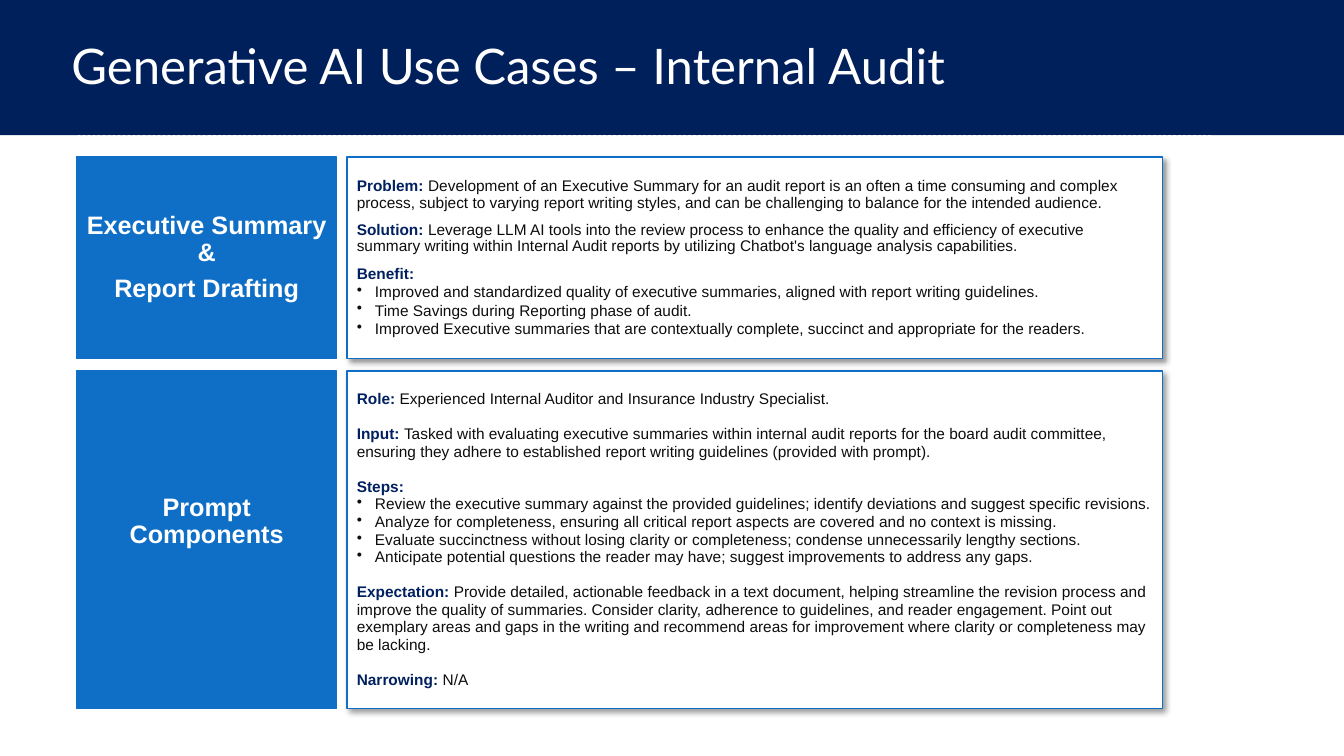
from lxml.etree import SubElement
from pptx import Presentation
from pptx.dml.color import RGBColor
from pptx.enum.dml import MSO_LINE
from pptx.enum.shapes import MSO_CONNECTOR, MSO_SHAPE
from pptx.enum.text import MSO_ANCHOR, PP_ALIGN
from pptx.oxml.ns import qn
from pptx.util import Inches, Pt

NAVY = RGBColor(0x00, 0x20, 0x5B)
HEADING = RGBColor(0x00, 0x20, 0x60)
BLUE = RGBColor(0x0F, 0x6F, 0xC6)
WHITE = RGBColor(0xFF, 0xFF, 0xFF)
INK = RGBColor(0x0D, 0x0D, 0x0D)

# Each row: top, height, label lines, label bottom inset, line spacing,
# bullet line spacing, gap between sections, sections (heading, text, bullets)
ROWS = [
    (1.56, 2, ["Executive Summary &", "Report Drafting"], 0.05, 0.9, 1.0, 7.5, [
        ("Problem:", "Development of an Executive Summary for an audit report is an often a time "
         "consuming and complex process, subject to varying report writing styles, and can be "
         "challenging to balance for the intended audience.", []),
        ("Solution:", "Leverage LLM AI tools into the review process to enhance the quality and "
         "efficiency of executive summary writing within Internal Audit reports by utilizing "
         "Chatbot's language analysis capabilities.", []),
        ("Benefit:", "", [
            "Improved and standardized quality of executive summaries, aligned with report "
            "writing guidelines.",
            "Time Savings during Reporting phase of audit.",
            "Improved Executive summaries that are contextually complete, succinct and "
            "appropriate for the readers."]),
    ]),
    (3.68, 3.35, ["Prompt Components"], 0.4, 0.95, 0.95, 12.5, [
        ("Role:", "Experienced Internal Auditor and Insurance Industry Specialist.", []),
        ("Input:", "Tasked with evaluating executive summaries within internal audit reports for "
         "the board audit committee, ensuring they adhere to established report writing "
         "guidelines (provided with prompt).", []),
        ("Steps:", "", [
            "Review the executive summary against the provided guidelines; identify deviations "
            "and suggest specific revisions.",
            "Analyze for completeness, ensuring all critical report aspects are covered and no "
            "context is missing.",
            "Evaluate succinctness without losing clarity or completeness; condense "
            "unnecessarily lengthy sections.",
            "Anticipate potential questions the reader may have; suggest improvements to "
            "address any gaps."]),
        ("Expectation:", "Provide detailed, actionable feedback in a text document, helping "
         "streamline the revision process and improve the quality of summaries. Consider clarity, "
         "adherence to guidelines, and reader engagement. Point out exemplary areas and gaps in "
         "the writing and recommend areas for improvement where clarity or completeness may be "
         "lacking.", []),
        ("Narrowing:", "N/A", []),
    ]),
]

presentation = Presentation()
presentation.slide_width = Inches(13.33)
presentation.slide_height = Inches(7.5)
slide = presentation.slides.add_slide(presentation.slide_layouts[6])


def add_box(left, top, width, height, fill, line=None):
    shape = slide.shapes.add_shape(MSO_SHAPE.RECTANGLE, Inches(left), Inches(top),
                                   Inches(width), Inches(height))
    shape.shadow.inherit = False
    shape.fill.solid()
    shape.fill.fore_color.rgb = fill
    if line is None:
        shape.line.fill.background()
    else:
        shape.line.color.rgb = line
        shape.line.width = Pt(1)
    shape.text_frame.word_wrap = True
    shape.text_frame.vertical_anchor = MSO_ANCHOR.MIDDLE
    return shape


def next_paragraph(frame, line_spacing, alignment=PP_ALIGN.LEFT):
    first = frame.paragraphs[0]
    paragraph = frame.add_paragraph() if first.runs else first
    paragraph.alignment = alignment
    paragraph.line_spacing = line_spacing
    return paragraph


# Title band with dashed rule
add_box(0, 0, 13.33, 1.34, NAVY)
rule = slide.shapes.add_connector(MSO_CONNECTOR.STRAIGHT, Inches(0.77), Inches(1.34),
                                  Inches(12.03), Inches(1.34))
rule.line.color.rgb = WHITE
rule.line.width = Pt(0.5)
rule.line.dash_style = MSO_LINE.DASH
SubElement(rule._element.spPr, qn("a:effectLst"))

title = slide.shapes.add_textbox(Inches(0.61), Inches(0.08), Inches(11.59), Inches(1.2))
title.text_frame.word_wrap = True
title.text_frame.vertical_anchor = MSO_ANCHOR.MIDDLE
paragraph = next_paragraph(title.text_frame, 0.9)
paragraph.text = "Generative AI Use Cases – Internal Audit"
paragraph.font.name = "Lato"
paragraph.font.size = Pt(35)
paragraph.font.color.rgb = WHITE

for top, height, label_lines, bottom_inset, spacing, bullet_spacing, gap, sections in ROWS:
    # Blue label
    label = add_box(0.76, top, 2.58, height, BLUE, BLUE)
    label.text_frame.margin_bottom = Inches(bottom_inset)
    for text in label_lines:
        paragraph = next_paragraph(label.text_frame, 0.9, PP_ALIGN.CENTER)
        paragraph.text = text
        paragraph.space_after = Pt(6)
        paragraph.font.name = "Arial"
        paragraph.font.size = Pt(18)
        paragraph.font.bold = True
        paragraph.font.color.rgb = WHITE

    # White panel with drop shadow
    panel = add_box(3.44, top, 8.09, height, WHITE, BLUE)
    effects = panel._element.spPr.find(qn("a:effectLst"))
    shadow = SubElement(effects, qn("a:outerShdw"), blurRad=str(Pt(4)), dist=str(Pt(3)),
                        dir="2700000", algn="tl", rotWithShape="0")
    shadow_color = SubElement(shadow, qn("a:srgbClr"), val="000000")
    SubElement(shadow_color, qn("a:alpha"), val="40000")

    # Panel sections
    for index, (heading, text, bullets) in enumerate(sections):
        paragraph = next_paragraph(panel.text_frame, spacing)
        if index:
            paragraph.space_before = Pt(gap)
        paragraph.font.name = "Arial"
        paragraph.font.size = Pt(11)
        run = paragraph.add_run()
        run.text = heading + " " if text else heading
        run.font.bold = True
        run.font.color.rgb = HEADING
        if text:
            run = paragraph.add_run()
            run.text = text
            run.font.color.rgb = INK
        for bullet in bullets:
            paragraph = next_paragraph(panel.text_frame, bullet_spacing)
            paragraph.text = bullet
            properties = paragraph._p.get_or_add_pPr()
            properties.set("marL", str(Inches(0.18)))
            properties.set("indent", str(Inches(-0.18)))
            SubElement(properties, qn("a:buChar"), char="•")
            paragraph.font.name = "Arial"
            paragraph.font.size = Pt(11)
            paragraph.font.color.rgb = INK

presentation.save("out.pptx")
